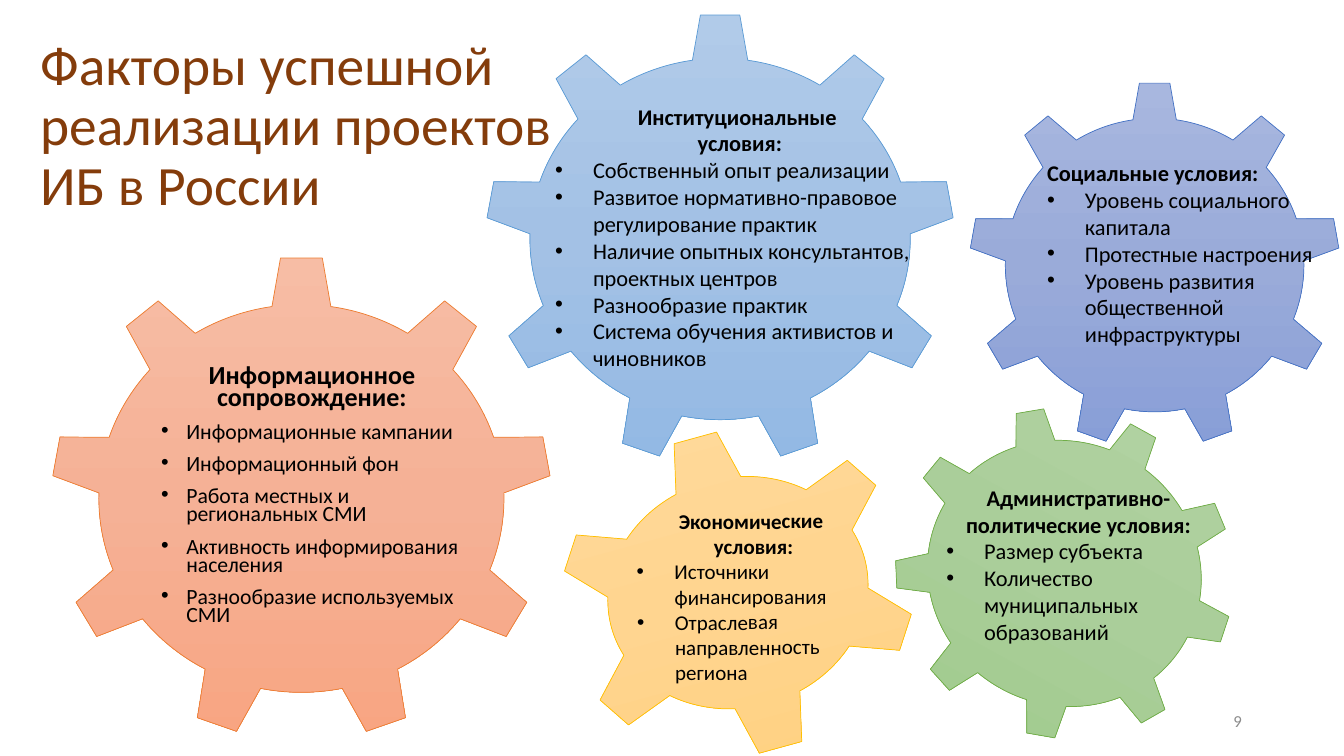
from copy import deepcopy
from lxml.etree import SubElement as Sub
from pptx import Presentation
from pptx.dml.color import RGBColor as Rgb
from pptx.enum.shapes import MSO_SHAPE as Kind
from pptx.enum.text import MSO_ANCHOR as Anchor, PP_ALIGN as Align
from pptx.oxml.ns import qn
from pptx.util import Pt

# Content: box = left, top, width, height in points
TITLE = "Факторы успешной реализации проектов ИБ в России"
PAGE = "9"
GEARS = [
    dict(hue="info", kind=Kind.GEAR_9, box=(36, 182.9, 358.6, 346.3), turn=0,
         area=(108, 258.5, 229.7, 197.3), tilt=0, style="tight", align=Align.CENTER,
         heads=["Информационное сопровождение:"],
         items=["Информационные кампании", "Информационный фон",
                "Работа местных и региональных СМИ",
                "Активность информирования населения",
                "Разнообразие используемых СМИ"]),
    dict(hue="inst", kind=Kind.GEAR_9, box=(346.3, 9.4, 336.2, 322.6), turn=0,
         area=(389.5, 69.8, 274.3, 220.3), tilt=0, style="plain", align=Align.CENTER,
         heads=["Институциональные", " условия:"],
         items=["Собственный опыт реализации",
                "Развитое нормативно-правовое регулирование практик",
                "Наличие опытных консультантов, проектных центров",
                "Разнообразие практик",
                "Система обучения активистов и чиновников"]),
    dict(hue="econ", kind=Kind.GEAR_6, box=(398.2, 306, 257.8, 234.7), turn=344.6,
         area=(447.8, 359.3, 181.4, 138.2), tilt=359.6, style="small", align=Align.CENTER,
         heads=["Экономические ", "условия:"],
         items=["Источники финансирования", "Отраслевая направленность региона"]),
    dict(hue="social", kind=Kind.GEAR_9, box=(691.9, 58.3, 265.7, 262.1), turn=0,
         area=(740.9, 110.2, 226.1, 162.7), tilt=0, style="plain", align=Align.LEFT,
         heads=["Социальные условия:"],
         items=["Уровень социального капитала", "Протестные настроения",
                "Уровень развития общественной инфраструктуры"]),
    dict(hue="admin", kind=Kind.GEAR_9, box=(637.9, 292.3, 244.8, 234.7), turn=28.9,
         area=(668.9, 342, 203, 123.8), tilt=0, style="plain", align=Align.CENTER,
         heads=["Административно-политические условия:"],
         items=["Размер субъекта", "Количество муниципальных образований"]),
]

# Theme: hues = three gradient stops and the line;
# styles = head size, item size, indent, line spacing, space before
THEME = dict(
    font="Calibri", title="843C0B", text="000000", page="8C8C8C",
    big=39.6, tiny=12, line=0.5,
    hues=dict(info=("F7BDA5", "F5B196", "F8A582", "ED7D31"),
              inst=("B1CBE9", "A3C1E5", "93B9E4", "5B9BD5"),
              econ=("FFDB9E", "FFD590", "FFD07C", "FFC000"),
              social=("A8B7DF", "9AABD9", "889ED7", "4472C4"),
              admin=("B5D5A7", "AACE9A", "9CC987", "70AD47")),
    styles=dict(tight=(18.6, 15.5, 18, 0.7, 10),
                plain=(16, 16, 27, 1, 0),
                small=(15, 15, 27, 1, 0)),
)

deck = Presentation()
deck.slide_width, deck.slide_height = Pt(960), Pt(540)
slide = deck.slides.add_slide(deck.slide_layouts[6])
shapes = slide.shapes


def add_box(box, anchor=Anchor.TOP):
    area = shapes.add_textbox(*map(Pt, box))
    area.text_frame.word_wrap = True
    area.text_frame.vertical_anchor = anchor
    return area


def write(para, text, size, color, bold=False, align=Align.LEFT, gap=1, before=0):
    para.text = text
    para.alignment = align
    para.line_spacing, para.space_before = gap, Pt(before)
    font = para.font
    font.name, font.size, font.bold = THEME["font"], Pt(size), bold
    font.color.rgb = Rgb.from_string(color)


def add_bullet(para, indent):
    props = para._p.get_or_add_pPr()
    props.set("marL", str(Pt(indent)))
    props.set("indent", str(-Pt(indent)))
    mark = Sub(props, qn("a:buFont"))
    mark.set("typeface", "Arial")
    Sub(props, qn("a:buChar")).set("char", "•")
    # Bullet marks come before the default run properties
    props.append(props.find(qn("a:defRPr")))


def add_gear(gear):
    shape = shapes.add_shape(gear["kind"], *map(Pt, gear["box"]))
    shape.rotation = gear["turn"]
    shape.shadow.inherit = False
    *tones, edge = THEME["hues"][gear["hue"]]
    shape.line.color.rgb = Rgb.from_string(edge)
    shape.line.width = Pt(THEME["line"])
    fill = shape.fill
    fill.gradient()
    fill.gradient_angle = 270
    stops = shape._element.spPr.find(qn("a:gradFill")).find(qn("a:gsLst"))
    stops.insert(1, deepcopy(stops[0]))
    for step, (stop, tone) in enumerate(zip(fill.gradient_stops, tones)):
        stop.color.rgb = Rgb.from_string(tone)
        stop.position = step / 2


def add_list(gear):
    area = add_box(gear["area"])
    area.rotation = gear["tilt"]
    frame = area.text_frame
    large, small, indent, gap, before = THEME["styles"][gear["style"]]
    heads = gear["heads"]
    for pos, text in enumerate(heads + gear["items"]):
        para = frame.add_paragraph() if pos else frame.paragraphs[0]
        head = pos < len(heads)
        write(para, text, large if head else small, THEME["text"], head,
              gear["align"] if head else Align.LEFT, gap, before)
        if not head:
            add_bullet(para, indent)


# Title
title = add_box((21.6, 13, 393.1, 156.2), Anchor.MIDDLE)
write(title.text_frame.paragraphs[0], TITLE, THEME["big"], THEME["title"], gap=0.9)

# Gears with their lists
for gear in GEARS:
    add_gear(gear)
    add_list(gear)

# Page number
page = add_box((678.2, 500.4, 216, 28.8), Anchor.MIDDLE)
write(page.text_frame.paragraphs[0], PAGE, THEME["tiny"], THEME["page"], align=Align.RIGHT)

deck.save("out.pptx")
